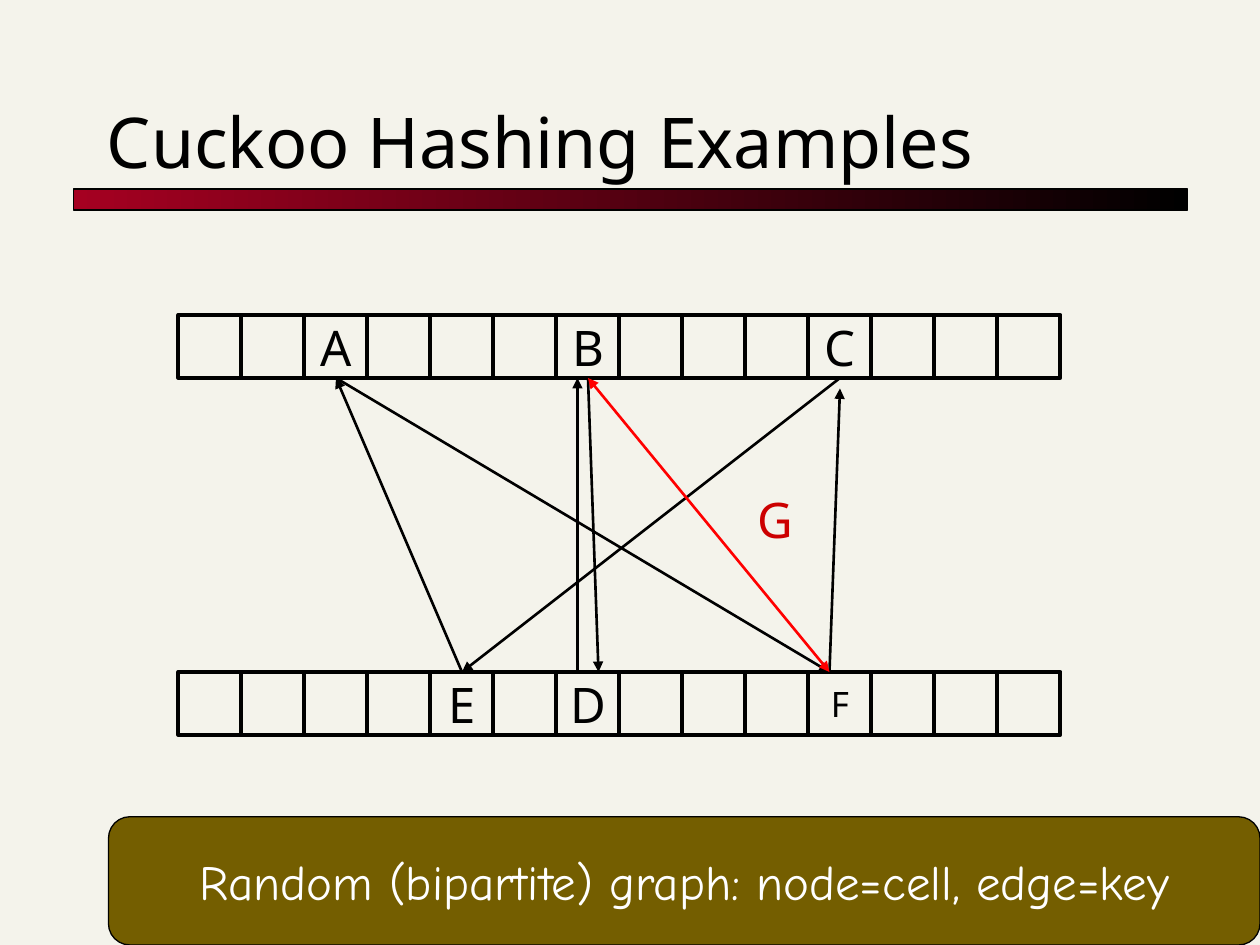
from typing import NamedTuple

import pptx
import pptx.dml.color
import pptx.enum.shapes
import pptx.enum.text
import pptx.oxml
import pptx.oxml.ns
import pptx.util
from pptx.enum.shapes import MSO_SHAPE
from pptx.enum.text import MSO_ANCHOR, PP_ALIGN

Pt = pptx.util.Pt
BLACK = "000000"
SANS = "Noto Sans"
CELL = 36
CELLS_PER_ROW = 14
ROW_LEFT = 102
UPPER_TOP = 180
UPPER_BOTTOM = UPPER_TOP + CELL
LOWER_TOP = 384


class Area(NamedTuple):
    left: float
    top: float
    width: float
    height: float


class Label(NamedTuple):
    text: str
    size: float = 28
    font: str = SANS
    colour: str = BLACK


class Row(NamedTuple):
    top: float
    keys: dict[int, Label]


class Edge(NamedTuple):
    start: tuple[float, float]
    end: tuple[float, float]
    colour: str = BLACK
    two_way: bool = False


def rgb(colour: str) -> pptx.dml.color.RGBColor:
    return pptx.dml.color.RGBColor.from_string(colour)


def centre(column: int) -> float:
    """Horizontal middle of a table cell."""
    return ROW_LEFT + CELL * (column + 0.5)


def write(box, label: Label, anchor, align, wrap: bool = False) -> None:
    frame = box.text_frame
    frame.word_wrap = wrap
    frame.vertical_anchor = anchor
    para = frame.paragraphs[0]
    para.alignment = align
    span = para.add_run()
    span.text = label.text
    span.font.size = Pt(label.size)
    span.font.name = label.font
    span.font.color.rgb = rgb(label.colour)


def add_box(page, kind, area: Area, line_width: float, fill: str | None = None):
    box = page.shapes.add_shape(kind, *map(Pt, area))
    box.shadow.inherit = False
    box.line.color.rgb = rgb(BLACK)
    box.line.width = Pt(line_width)
    if fill:
        box.fill.solid()
        box.fill.fore_color.rgb = rgb(fill)
    else:
        box.fill.background()
    return box


def add_text(page, area: Area, label: Label, anchor, wrap: bool = False) -> None:
    box = page.shapes.add_textbox(*map(Pt, area))
    write(box, label, anchor, PP_ALIGN.LEFT, wrap)


def add_title_bar(page) -> None:
    bar = add_box(page, MSO_SHAPE.RECTANGLE, Area(42, 108, 636.5, 12), 0.75)
    bar.fill.gradient()
    bar.fill.gradient_angle = 0
    for stop, colour in zip(bar.fill.gradient_stops, ("A50021", BLACK)):
        stop.color.rgb = rgb(colour)


def add_row(page, row: Row) -> None:
    for column in range(CELLS_PER_ROW):
        area = Area(ROW_LEFT + CELL * column, row.top, CELL, CELL)
        box = add_box(page, MSO_SHAPE.RECTANGLE, area, 2.25)
        if column in row.keys:
            write(box, row.keys[column], MSO_ANCHOR.MIDDLE, PP_ALIGN.CENTER)


def add_edge(page, edge: Edge) -> None:
    arrow = page.shapes.add_connector(
        pptx.enum.shapes.MSO_CONNECTOR.STRAIGHT, *map(Pt, edge.start + edge.end)
    )
    arrow.line.color.rgb = rgb(edge.colour)
    arrow.line.width = Pt(1.5)
    properties = arrow.element.spPr
    outline = properties.find(pptx.oxml.ns.qn("a:ln"))
    for tag in ("headEnd", "tailEnd") if edge.two_way else ("tailEnd",):
        outline.append(pptx.oxml.parse_xml(
            f'<a:{tag} {pptx.oxml.ns.nsdecls("a")} type="triangle"/>'
        ))
    properties.append(pptx.oxml.parse_xml(
        f'<a:effectLst {pptx.oxml.ns.nsdecls("a")}/>'
    ))


ROWS = [
    Row(UPPER_TOP, {2: Label("A"), 6: Label("B"), 10: Label("C")}),
    Row(LOWER_TOP, {4: Label("E"), 6: Label("D"), 10: Label("F", 20)}),
]
CELL_A = (centre(2), UPPER_BOTTOM)
CELL_B = (centre(6), UPPER_BOTTOM)
CELL_C = (centre(10), UPPER_BOTTOM)
CELL_E = (centre(4), LOWER_TOP)
CELL_F = (centre(10) - 6, LOWER_TOP)
EDGES = [
    Edge(CELL_A, CELL_F),
    Edge(CELL_B, (centre(6) + 6, LOWER_TOP)),
    Edge(CELL_C, CELL_E),
    Edge((centre(6) - 6, LOWER_TOP), (centre(6) - 6, UPPER_BOTTOM)),
    Edge(CELL_E, CELL_A),
    Edge(CELL_F, (centre(10), UPPER_BOTTOM + 6)),
]
NEW_EDGE = Edge(CELL_F, CELL_B, "FF0000", two_way=True)


def main() -> None:
    deck = pptx.Presentation()
    deck.slide_width, deck.slide_height = Pt(720), Pt(540)
    page = deck.slides.add_slide(deck.slide_layouts[6])
    page.background.fill.solid()
    page.background.fill.fore_color.rgb = rgb("F4F3EB")

    add_title_bar(page)
    add_text(page, Area(54, 18, 612, 90), Label("Cuckoo Hashing Examples", 40),
             MSO_ANCHOR.BOTTOM, wrap=True)
    for row in ROWS:
        add_row(page, row)
    for edge in EDGES:
        add_edge(page, edge)
    add_text(page, Area(426, 276, 34.5, 41), Label("G", colour="CC0000"), MSO_ANCHOR.TOP)
    add_edge(page, NEW_EDGE)

    banner = add_box(page, MSO_SHAPE.ROUNDED_RECTANGLE, Area(62, 466.75, 658, 73.25),
                     0.75, "745E00")
    write(banner, Label("Random (bipartite) graph: node=cell, edge=key",
                        font="Comic Neue", colour="FFFFFF"),
          MSO_ANCHOR.MIDDLE, PP_ALIGN.CENTER)
    deck.save("out.pptx")


if __name__ == "__main__":
    main()
